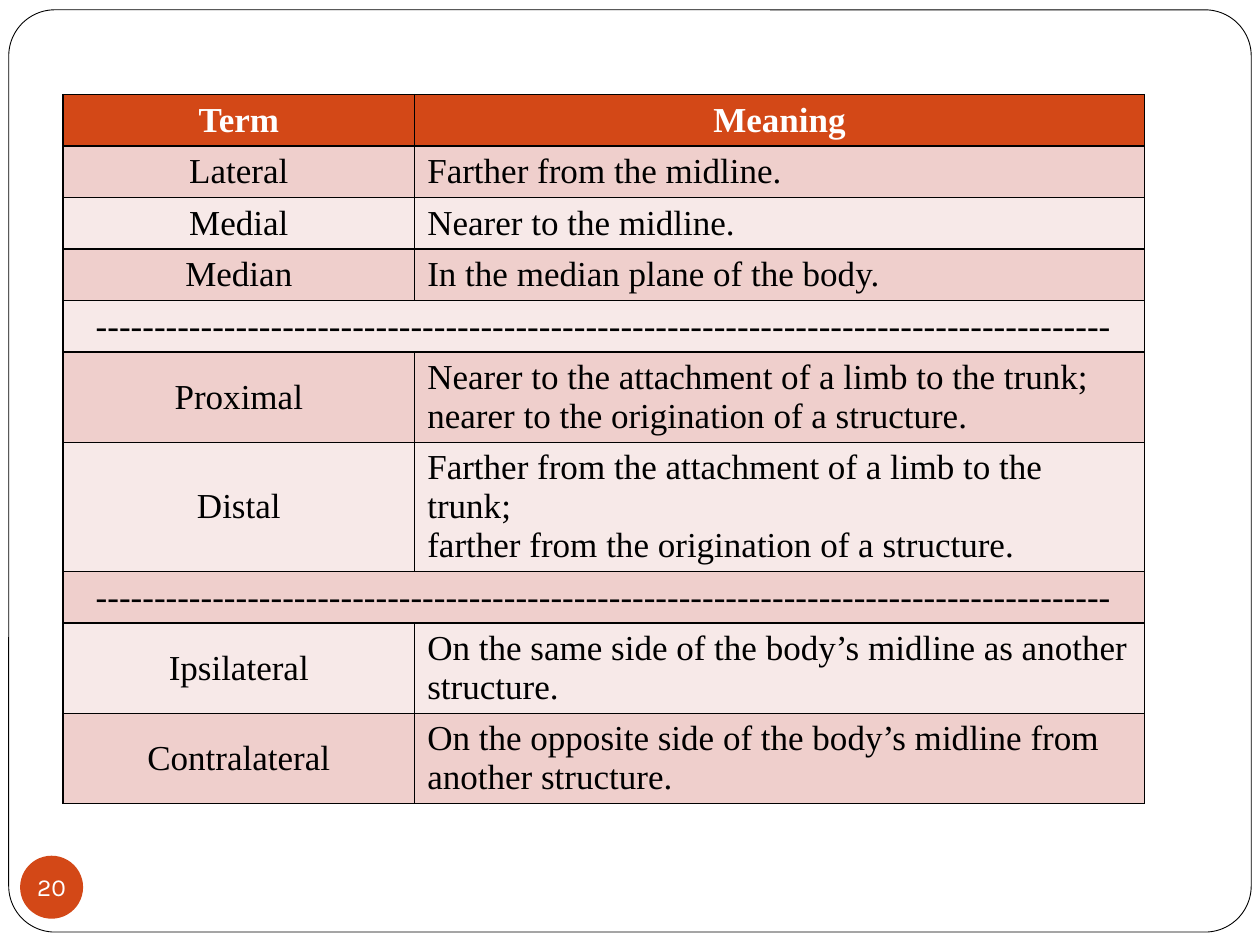
"""Build a slide with a table of anatomical terms of position."""
from lxml import etree
from pptx import Presentation
from pptx.dml.color import RGBColor
from pptx.enum.shapes import MSO_SHAPE
from pptx.enum.text import MSO_ANCHOR, PP_ALIGN
from pptx.oxml.ns import qn
from pptx.util import Pt

ROUNDED, OVAL = MSO_SHAPE.ROUNDED_RECTANGLE, MSO_SHAPE.OVAL
CENTER, LEFT = PP_ALIGN.CENTER, PP_ALIGN.LEFT
MIDDLE, TOP = MSO_ANCHOR.MIDDLE, MSO_ANCHOR.TOP
ACCENT, WHITE, BLACK = "D34817", "FFFFFF", "000000"
BANDS = ("F7E9E8", "EFCFCC")
SEPARATOR = ("-" * 87, None)
ROW_HEIGHT = 29.2
ROWS = [
    ("Term", "Meaning"),
    ("Lateral", "Farther from the midline."),
    ("Medial", "Nearer to the midline."),
    ("Median", "In the median plane of the body."),
    SEPARATOR,
    ("Proximal", "Nearer to the attachment of a limb to the trunk; "
                 "nearer to the origination of a structure."),
    ("Distal", "Farther from the attachment of a limb to the trunk;\n"
               "farther from the origination of a structure."),
    SEPARATOR,
    ("Ipsilateral", "On the same side of the body’s midline as another structure."),
    ("Contralateral", "On the opposite side of the body’s midline from another structure."),
]


def color(value):
    """Return the colour for a hex string."""
    return RGBColor.from_string(value)


def format_text(text_frame, font_name, size, text_color, alignment, bold=False):
    """Format every paragraph and run of a text frame."""
    for paragraph in text_frame.paragraphs:
        paragraph.alignment = alignment
        for run in paragraph.runs:
            run.font.name = font_name
            run.font.size = Pt(size)
            run.font.bold = bold
            run.font.color.rgb = color(text_color)


def add_shape(slide, kind, left, top, width, height, fill):
    """Add a filled preset shape without outline or shadow."""
    shape = slide.shapes.add_shape(kind, Pt(left), Pt(top), Pt(width), Pt(height))
    shape.shadow.inherit = False
    shape.fill.solid()
    shape.fill.fore_color.rgb = color(fill)
    shape.line.fill.background()
    return shape


def add_frame(slide):
    """Add the thin rounded frame around the slide."""
    frame = add_shape(slide, ROUNDED, 5, 5.6, 710, 527, WHITE)
    frame.adjustments[0] = 0.05
    frame.line.color.rgb = color(BLACK)
    frame.line.width = Pt(0.5)


def add_page_number(slide, number):
    """Add the round badge with the page number."""
    badge = add_shape(slide, OVAL, 11.5, 489, 36, 36, ACCENT)
    text_frame = badge.text_frame
    text_frame.text = number
    text_frame.word_wrap = False
    text_frame.vertical_anchor = MIDDLE
    text_frame.margin_left = text_frame.margin_right = Pt(0)
    text_frame.margin_top = text_frame.margin_bottom = Pt(0)
    format_text(text_frame, "Karla", 14, WHITE, CENTER)


def set_borders(cell):
    """Draw a thin black line on all four sides of a cell."""
    properties = cell._tc.get_or_add_tcPr()
    for position, side in enumerate(("lnL", "lnR", "lnT", "lnB")):
        line = etree.Element(qn(f"a:{side}"), w=str(Pt(1)))
        fill = etree.SubElement(line, qn("a:solidFill"))
        etree.SubElement(fill, qn("a:srgbClr"), val=BLACK)
        properties.insert(position, line)


def format_cell(cell, text, fill, text_color, alignment, anchor, bold):
    """Fill one cell with text, background and borders."""
    cell.text_frame.text = text
    cell.vertical_anchor = anchor
    cell.fill.solid()
    cell.fill.fore_color.rgb = color(fill)
    set_borders(cell)
    format_text(cell.text_frame, "Times New Roman", 20, text_color, alignment, bold)


def add_terms_table(slide):
    """Add the table of terms with banded rows and merged separators."""
    graphic_frame = slide.shapes.add_table(
        len(ROWS), 2, Pt(36), Pt(54), Pt(618), Pt(ROW_HEIGHT * len(ROWS)))
    table = graphic_frame.table
    for column, width in zip(table.columns, (201, 417)):
        column.width = Pt(width)
    for index, (term, meaning) in enumerate(ROWS):
        header = index == 0
        fill = ACCENT if header else BANDS[index % 2]
        text_color = WHITE if header else BLACK
        term_cell, meaning_cell = table.cell(index, 0), table.cell(index, 1)
        table.rows[index].height = Pt(ROW_HEIGHT)
        format_cell(term_cell, term, fill, text_color, CENTER, MIDDLE, header)
        format_cell(meaning_cell, meaning or "", fill, text_color,
                    CENTER if header else LEFT, TOP, header)
        if meaning is None:
            term_cell.merge(meaning_cell)
    table.rows[ROWS.index(SEPARATOR)].height = Pt(14.4)
    graphic_frame.height = Pt(408)


def main():
    """Build and save the presentation."""
    presentation = Presentation()
    presentation.slide_width, presentation.slide_height = Pt(720), Pt(540)
    slide = presentation.slides.add_slide(presentation.slide_layouts[6])
    add_frame(slide)
    add_terms_table(slide)
    add_page_number(slide, "20")
    presentation.save("out.pptx")


if __name__ == "__main__":
    main()
